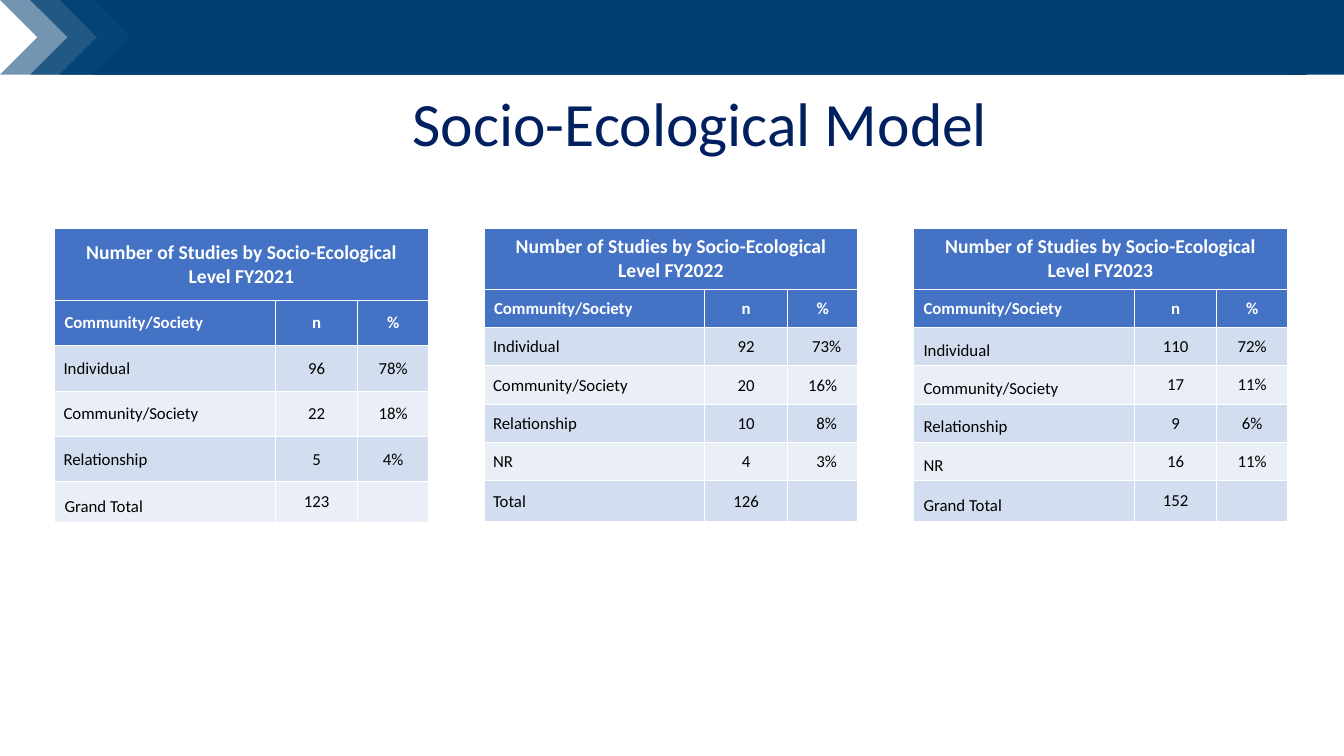
from pptx import Presentation
from pptx.dml.color import RGBColor
from pptx.enum.shapes import MSO_SHAPE
from pptx.enum.text import MSO_ANCHOR, PP_ALIGN
from pptx.oxml import parse_xml
from pptx.oxml.ns import nsdecls
from pptx.util import Inches, Pt

WIDTH, HEIGHT = 13.33, 7.5
BANNER_HEIGHT = 0.74
TABLES_LEFT, TABLES_TOP, TABLE_STEP = 0.54, 2.27, 4.26
COLUMN_WIDTHS = (2.19, 0.82, 0.7)

COLORS = {
    "banner": "003F72", "title": "002060", "head": "4472C4",
    "odd": "D2DEEF", "even": "EAEFF7", "white": "FFFFFF", "black": "000000",
}
CHEVRONS = ((0, 55), (0.3, 70), (0.59, 80), (0.92, 100))
HEADINGS = ("Community/Society", "n", "%")
ROOMY = {"margin_left": 0.1, "margin_right": 0.1, "margin_top": 0.05, "margin_bottom": 0.05}
COMPACT = {"margin_left": 0.01, "margin_right": 0.01, "margin_top": 0.01, "margin_bottom": 0}
LABEL_INDENT = 0.09

YEARS = (
    {
        "year": "FY2021", "heights": (0.71, 0.45, 0.45, 0.45, 0.45, 0.36),
        "compact_rows": 3, "indented": (),
        "levels": (("Individual", "96", "78%"), ("Community/Society", "22", "18%"),
                   ("Relationship", "5", "4%"), ("Grand Total", "123", "")),
    },
    {
        "year": "FY2022", "heights": (0.6,) + (0.38,) * 6,
        "compact_rows": 5, "indented": ("73%", "8%", "3%"),
        "levels": (("Individual", "92", "73%"), ("Community/Society", "20", "16%"),
                   ("Relationship", "10", "8%"), ("NR", "4", "3%"), ("Total", "126", "")),
    },
    {
        "year": "FY2023", "heights": (0.6,) + (0.38,) * 6,
        "compact_rows": 0, "indented": (),
        "levels": (("Individual", "110", "72%"), ("Community/Society", "17", "11%"),
                   ("Relationship", "9", "6%"), ("NR", "16", "11%"), ("Grand Total", "152", "")),
    },
)


def rgb(name):
    return RGBColor.from_string(COLORS[name])


def add_banner_part(slide, preset, left, opacity=100):
    part = slide.shapes.add_shape(
        preset, Inches(left), 0, Inches(WIDTH - left), Inches(BANNER_HEIGHT))
    part.shadow.inherit = False
    part.line.fill.background()
    part.fill.solid()
    part.fill.fore_color.rgb = rgb("banner")
    if opacity < 100:
        color = part.fill._xPr.find(".//{*}srgbClr")
        color.append(parse_xml(f'<a:alpha {nsdecls("a")} val="{opacity * 1000}"/>'))


def write(paragraph, text, size, color, bold=False, align=PP_ALIGN.CENTER):
    paragraph.alignment = align
    run = paragraph.add_run()
    run.text = text
    formats = {"name": "Calibri", "size": Pt(size), "bold": bold}
    for attribute, value in formats.items():
        setattr(run.font, attribute, value)
    run.font.color.rgb = rgb(color)


def add_title(slide, text):
    title = slide.shapes.add_textbox(Inches(0.3), Inches(0.92), Inches(12.47), Inches(0.67))
    frame = title.text_frame
    formats = {"word_wrap": True, "vertical_anchor": MSO_ANCHOR.MIDDLE,
               "margin_left": Inches(0.92)}
    for attribute, value in formats.items():
        setattr(frame, attribute, value)
    frame.paragraphs[0].line_spacing = 0.9
    write(frame.paragraphs[0], text, 44, "title")


def style_cell(cell, fill, margins, anchor=MSO_ANCHOR.MIDDLE):
    properties = cell._tc.get_or_add_tcPr()
    for side in ("lnL", "lnR", "lnT", "lnB"):
        properties.append(parse_xml(
            f'<a:{side} {nsdecls("a")} w="{Pt(1)}"><a:solidFill>'
            f'<a:srgbClr val="{COLORS["white"]}"/></a:solidFill></a:{side}>'))
    cell.fill.solid()
    cell.fill.fore_color.rgb = rgb(fill)
    cell.vertical_anchor = anchor
    for attribute, value in margins.items():
        setattr(cell, attribute, Inches(value))


def fill_level_row(table, index, level, study):
    band = "even" if index % 2 else "odd"
    compact = index < study["compact_rows"]
    for column, text in enumerate(level):
        cell = table.cell(index + 2, column)
        margins = dict(COMPACT if compact and text else ROOMY)
        if compact and (column == 0 or text in study["indented"]):
            margins["margin_left"] = LABEL_INDENT
        bottom = column == 0 and not compact
        style_cell(cell, band, margins, MSO_ANCHOR.BOTTOM if bottom else MSO_ANCHOR.MIDDLE)
        write(cell.text_frame.paragraphs[0], text, 12, "black",
              align=PP_ALIGN.CENTER if column else PP_ALIGN.LEFT)


def add_study_table(slide, position, study):
    heights = study["heights"]
    table = slide.shapes.add_table(
        len(heights), len(COLUMN_WIDTHS),
        Inches(TABLES_LEFT + position * TABLE_STEP), Inches(TABLES_TOP),
        Inches(sum(COLUMN_WIDTHS)), Inches(sum(heights))).table
    for column, width in zip(table.columns, COLUMN_WIDTHS):
        column.width = Inches(width)
    for row, height in zip(table.rows, heights):
        row.height = Inches(height)
    for column, heading in enumerate(HEADINGS):
        style_cell(table.cell(0, column), "head", ROOMY)
        style_cell(table.cell(1, column), "head", ROOMY)
        write(table.cell(1, column).text_frame.paragraphs[0], heading, 12, "white", True,
              PP_ALIGN.CENTER if column else PP_ALIGN.LEFT)
    caption = table.cell(0, 0)
    caption.merge(table.cell(0, len(COLUMN_WIDTHS) - 1))
    write(caption.text_frame.paragraphs[0],
          f"Number of Studies by Socio-Ecological Level {study['year']}", 14, "white", True)
    for index, level in enumerate(study["levels"]):
        fill_level_row(table, index, level, study)


def main():
    presentation = Presentation()
    presentation.slide_width = Inches(WIDTH)
    presentation.slide_height = Inches(HEIGHT)
    slide = presentation.slides.add_slide(presentation.slide_layouts[6])
    add_banner_part(slide, MSO_SHAPE.RECTANGLE, 12.75)
    for left, opacity in CHEVRONS:
        add_banner_part(slide, MSO_SHAPE.CHEVRON, left, opacity)
    add_title(slide, "Socio-Ecological Model")
    for position, study in enumerate(YEARS):
        add_study_table(slide, position, study)
    presentation.save("out.pptx")


if __name__ == "__main__":
    main()
